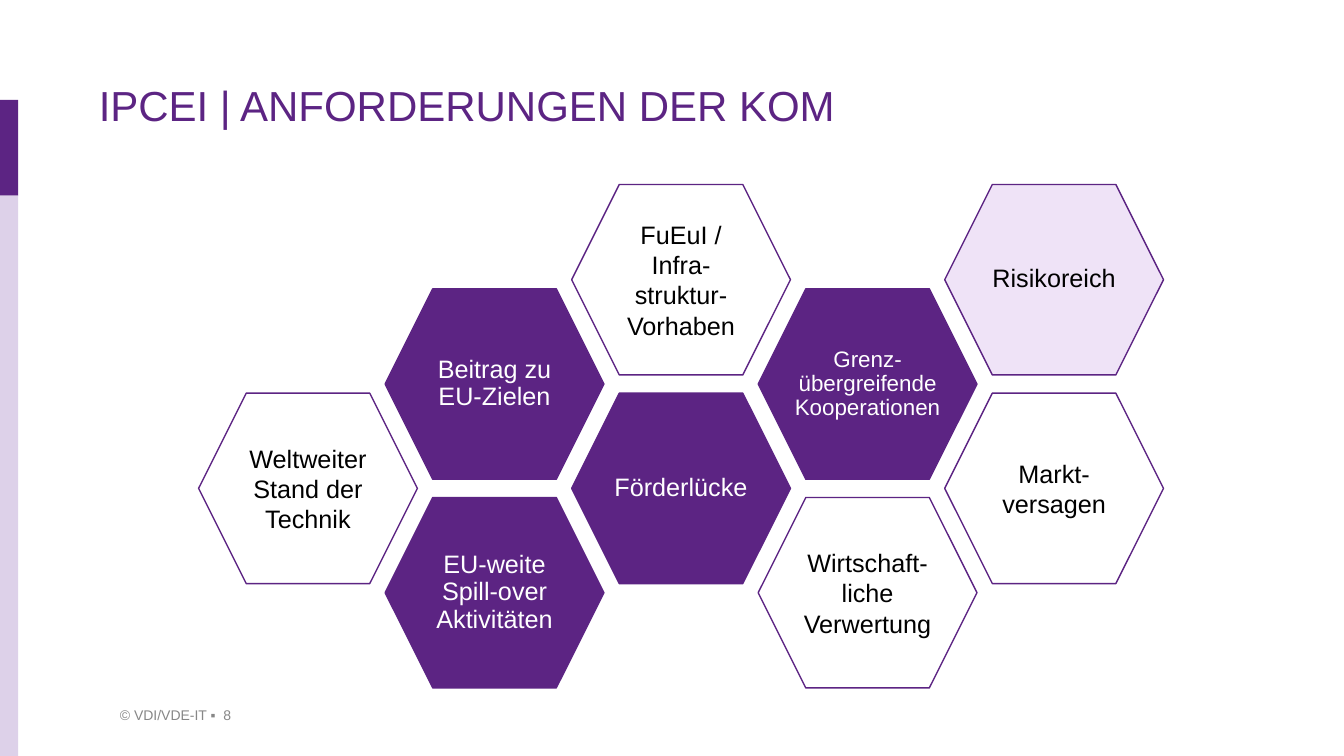
from dataclasses import dataclass

from lxml import etree
from pptx import Presentation
from pptx.dml.color import RGBColor
from pptx.enum import shapes, text
from pptx.oxml import ns
from pptx.util import Inches, Pt


@dataclass(frozen=True)
class Theme:
    """Colours, font and type sizes of the slide."""
    font: str = "Arial"
    purple: str = "5C2483"
    pale: str = "DDD1E9"
    lilac: str = "E0C9F0"
    white: str = "FFFFFF"
    black: str = "000000"
    grey: str = "878787"
    title: int = 30
    label: int = 18
    small: int = 16
    footer: int = 10


THEME = Theme()
WIDTH, HEIGHT = 13.33, 7.5
CELL_W, CELL_H = 2.17, 1.89
COLUMN_STEP, ROW_STEP = 1.85, 1.035

STYLES = {
    "core": (THEME.purple, THEME.white, 100, 0.9),
    "open": (THEME.white, THEME.black, 90, 1.0),
    "risk": (THEME.lilac, THEME.black, 50, 0.9),
}

# column, row, style, type size, side inset, paragraphs
REQUIREMENTS = [
    (1, 3, "core", THEME.label, 0, ["EU-weite Spill-over Aktivitäten"]),
    (0, 2, "open", THEME.label, 0.1, ["Weltweiter Stand der", "Technik"]),
    (2, 2, "core", THEME.label, 0, ["Förderlücke"]),
    (3, 3, "open", THEME.label, 0.02, ["Wirtschaft-liche Verwertung"]),
    (1, 1, "core", THEME.label, 0, ["Beitrag zu EU-Zielen"]),
    (2, 0, "open", THEME.label, 0.1, ["FuEuI / Infra-struktur-Vorhaben"]),
    (3, 1, "core", THEME.small, 0, ["Grenz-übergreifende Kooperationen"]),
    (4, 2, "open", THEME.label, 0.1, ["Markt-versagen"]),
    (4, 0, "risk", THEME.label, 0, ["Risikoreich"]),
]


def inches(*lengths):
    """Convert several lengths to EMU."""
    return [Inches(length) for length in lengths]


def set_insets(frame, left, top, right, bottom):
    """Set the four inner margins of a wrapping text frame."""
    frame.word_wrap = True
    (frame.margin_left, frame.margin_top,
     frame.margin_right, frame.margin_bottom) = inches(left, top, right, bottom)


def add_run(paragraph, words, size, colour):
    """Add one formatted run to a paragraph."""
    run = paragraph.add_run()
    run.text = words
    run.font.name = THEME.font
    run.font.size = Pt(size)
    run.font.color.rgb = RGBColor.from_string(colour)


def add_filled(slide, kind, box, colour, opacity=100):
    """Add a shadowless preset shape with a plain, optionally sheer fill."""
    shape = slide.shapes.add_shape(kind, *inches(*box))
    shape.shadow.inherit = False
    shape.fill.solid()
    shape.fill.fore_color.rgb = RGBColor.from_string(colour)
    shape.line.fill.background()
    if opacity < 100:
        tint = shape.fill._xPr.find(ns.qn("a:solidFill"))[0]
        etree.SubElement(tint, ns.qn("a:alpha")).set("val", str(opacity * 1000))
    return shape


def add_side_bar(slide, left, top, width, height):
    """Draw the two-tone bar at the slide edge."""
    head = 0.95
    bar = shapes.MSO_SHAPE.RECTANGLE
    add_filled(slide, bar, (left, top, width, head), THEME.purple)
    add_filled(slide, bar, (left, top + head, width, height - head), THEME.pale)


def add_heading(slide, words, box):
    """Place the title placeholder in its box."""
    heading = slide.shapes.title
    heading.left, heading.top, heading.width, heading.height = inches(*box)
    frame = heading.text_frame
    set_insets(frame, 0, 0, 0.12, 0)
    frame.auto_size = text.MSO_AUTO_SIZE.NONE
    frame.vertical_anchor = text.MSO_ANCHOR.TOP
    frame.paragraphs[0].alignment = text.PP_ALIGN.LEFT
    add_run(frame.paragraphs[0], words, THEME.title, THEME.purple)


def add_requirement(slide, box, style, size, inset, lines):
    """Draw one labelled hexagon."""
    fill, ink, opacity, spacing = STYLES[style]
    cell = add_filled(slide, shapes.MSO_SHAPE.HEXAGON, box, fill, opacity)
    cell.adjustments[0] = 0.25
    cell.line.color.rgb = RGBColor.from_string(THEME.purple)
    cell.line.width = Pt(1)
    frame = cell.text_frame
    set_insets(frame, inset, 0.05, inset, 0.05)
    frame.vertical_anchor = text.MSO_ANCHOR.MIDDLE
    for index, words in enumerate(lines):
        paragraph = frame.add_paragraph() if index else frame.paragraphs[0]
        paragraph.alignment = text.PP_ALIGN.CENTER
        paragraph.line_spacing = spacing
        add_run(paragraph, words, size, ink)


def add_honeycomb(slide, left, top):
    """Place the requirements on a grid of half-offset hexagons."""
    for column, row, *content in REQUIREMENTS:
        box = (left + column * COLUMN_STEP, top + row * ROW_STEP, CELL_W, CELL_H)
        add_requirement(slide, box, *content)


def add_footer(slide, words, box):
    """Write the copyright line with the page number."""
    frame = slide.shapes.add_textbox(*inches(*box)).text_frame
    set_insets(frame, 0.19, 0, 0.12, 0)
    frame.vertical_anchor = text.MSO_ANCHOR.MIDDLE
    add_run(frame.paragraphs[0], words, THEME.footer, THEME.grey)


def main():
    """Build and save the slide."""
    deck = Presentation()
    deck.slide_width, deck.slide_height = inches(WIDTH, HEIGHT)
    slide = deck.slides.add_slide(deck.slide_layouts[5])
    add_side_bar(slide, 0, 0.99, 0.18, HEIGHT - 0.99)
    add_heading(slide, "IPCEI | ANFORDERUNGEN DER KOM", (0.98, 0.79, 9.36, 0.85))
    add_footer(slide, "© VDI/VDE-IT ▪  8", (1, 6.97, 11.47, 0.24))
    add_honeycomb(slide, 1.97, 1.83)
    deck.save("out.pptx")


if __name__ == "__main__":
    main()
